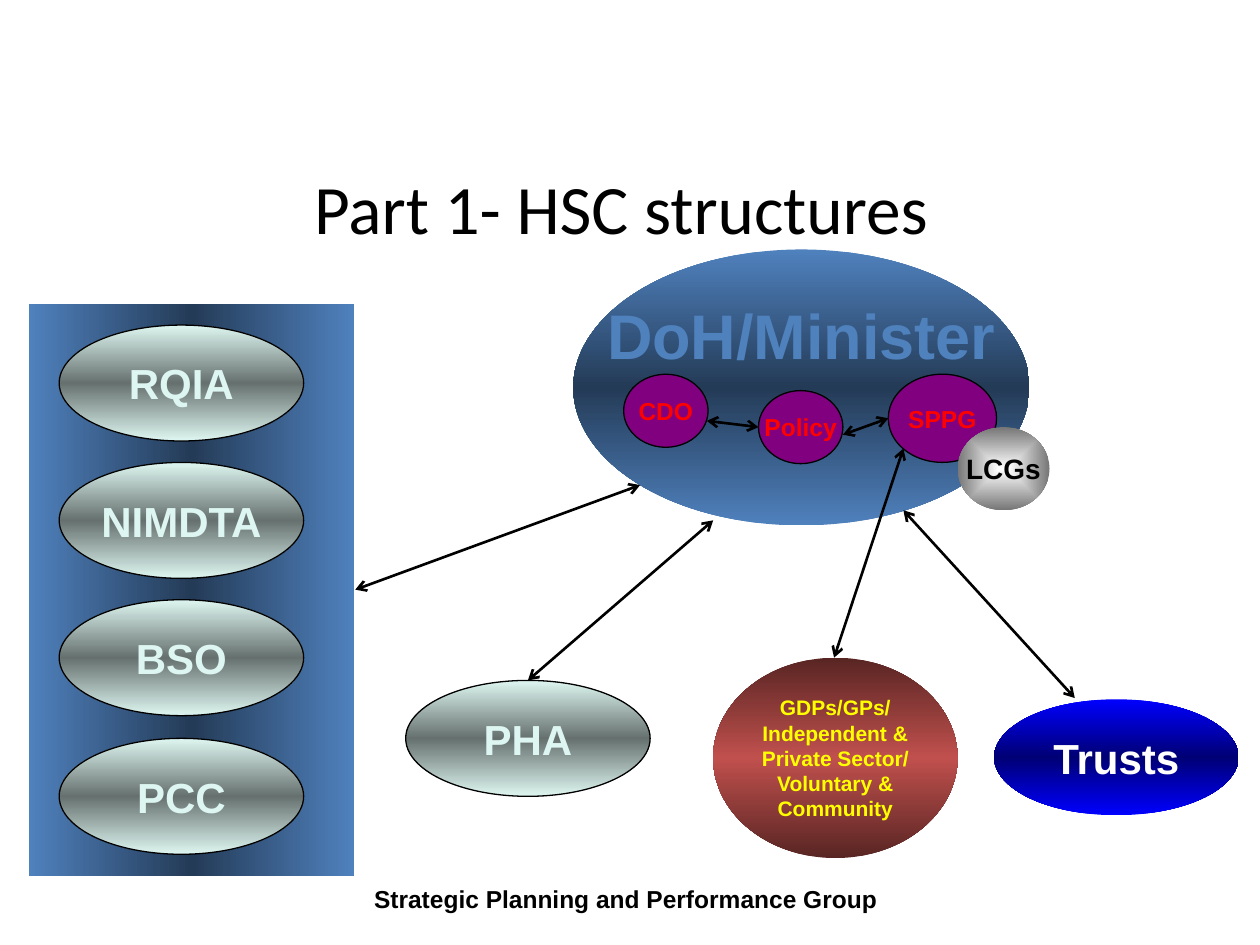
from dataclasses import dataclass
from typing import Optional

from pptx import Presentation
from pptx.dml.color import RGBColor
from pptx.enum.shapes import MSO_CONNECTOR, MSO_SHAPE
from pptx.enum.text import MSO_ANCHOR, PP_ALIGN
from pptx.oxml import parse_xml
from pptx.oxml.ns import nsdecls, qn
from pptx.util import Emu, Pt

PX = 9144

BLACK = RGBColor(0x00, 0x00, 0x00)
WHITE = RGBColor(0xFF, 0xFF, 0xFF)
RED = RGBColor(0xFF, 0x00, 0x00)
YELLOW = RGBColor(0xFF, 0xFF, 0x00)
PURPLE = RGBColor(0x80, 0x00, 0x80)
GRAY = RGBColor(0x76, 0x76, 0x76)
STEEL = RGBColor(0x4F, 0x81, 0xBD)
DARK_STEEL = RGBColor(0x24, 0x3B, 0x57)
MINT = RGBColor(0xDE, 0xF6, 0xF1)
DARK_MINT = RGBColor(0x66, 0x71, 0x6F)
BLUE = RGBColor(0x00, 0x00, 0xFF)
DARK_BLUE = RGBColor(0x00, 0x00, 0x75)
BRICK = RGBColor(0xC0, 0x50, 0x4D)
DARK_BRICK = RGBColor(0x58, 0x25, 0x23)


@dataclass(frozen=True)
class Style:
    colors: tuple[RGBColor, ...]
    text_color: RGBColor
    text_size: int
    outlined: bool = False
    angle: Optional[int] = 90


@dataclass(frozen=True)
class Body:
    text: str
    left: int
    top: int
    width: int
    height: int
    style: Style
    kind: MSO_SHAPE = MSO_SHAPE.OVAL
    anchor: MSO_ANCHOR = MSO_ANCHOR.MIDDLE
    wrap: bool = False


@dataclass(frozen=True)
class Arrow:
    start: tuple[int, int]
    end: tuple[int, int]


MINISTRY = Style((STEEL, DARK_STEEL, STEEL), STEEL, 36)
PANEL = Style((STEEL, DARK_STEEL, STEEL), STEEL, 20, angle=0)
AGENCY = Style((MINT, DARK_MINT, MINT), MINT, 24, outlined=True)
BRANCH = Style((PURPLE,), RED, 14, outlined=True)
TRUST = Style((BLUE, DARK_BLUE, BLUE), WHITE, 24)
PROVIDER = Style((DARK_BRICK, BRICK, DARK_BRICK), YELLOW, 12)
LOCAL_GROUP = Style((WHITE, GRAY), BLACK, 16, angle=None)

AGENCY_SIZE = (194, 92)
COLUMN_LEFT, COLUMN_TOP, COLUMN_BOTTOM = 47, 258, 586
COLUMN_NAMES = ("RQIA", "NIMDTA", "BSO", "PCC")

BODIES = [
    Body("DoH/Minister", 455, 198, 362, 219, MINISTRY, anchor=MSO_ANCHOR.TOP),
    Body("PHA", 322, 540, *AGENCY_SIZE, AGENCY),
    Body("CDO", 495, 297, 67, 58, BRANCH),
    Body("Trusts", 789, 555, *AGENCY_SIZE, TRUST),
    Body("GDPs/GPs/ Independent & Private Sector/ Voluntary & Community",
         566, 522, 194, 159, PROVIDER, wrap=True),
    Body("", 23, 241, 258, 454, PANEL, kind=MSO_SHAPE.RECTANGLE),
    Body("Policy", 602, 310, 67, 58, BRANCH),
    Body("SPPG", 705, 297, 86, 70, BRANCH),
    Body("LCGs", 760, 339, 73, 66, LOCAL_GROUP),
]

ARROWS = [
    Arrow((419, 540), (566, 413)),
    Arrow((282, 468), (508, 385)),
    Arrow((662, 522), (717, 356)),
    Arrow((853, 554), (717, 405)),
    Arrow((561, 334), (602, 339)),
    Arrow((669, 345), (705, 332)),
]


def px(*lengths: int) -> list[Emu]:
    return [Emu(length * PX) for length in lengths]


def paint(shape, style: Style) -> None:
    if len(style.colors) == 1:
        shape.fill.solid()
        shape.fill.fore_color.rgb = style.colors[0]
        return
    last = len(style.colors) - 1
    stops = "".join(
        f'<a:gs pos="{index * 100000 // last}"><a:srgbClr val="{color}"/></a:gs>'
        for index, color in enumerate(style.colors))
    if style.angle is None:
        direction = ('<a:path path="shape"><a:fillToRect l="50000" t="50000" '
                     'r="50000" b="50000"/></a:path>')
    else:
        direction = f'<a:lin ang="{style.angle * 60000}" scaled="1"/>'
    shape.fill.gradient()
    properties = shape._element.spPr
    gradient = parse_xml(f'<a:gradFill {nsdecls("a")} rotWithShape="1">'
                         f'<a:gsLst>{stops}</a:gsLst>{direction}</a:gradFill>')
    properties.replace(properties.find(qn("a:gradFill")), gradient)


def write(shape, text: str, size: float, color: RGBColor,
          font: str = "Arial", bold: bool = True) -> None:
    shape.text_frame.text = text
    para = shape.text_frame.paragraphs[0]
    para.alignment = PP_ALIGN.CENTER
    para.font.name = font
    para.font.size = Pt(size)
    para.font.bold = bold
    para.font.color.rgb = color


def draw_body(page, body: Body) -> None:
    shape = page.shapes.add_shape(
        body.kind, *px(body.left, body.top, body.width, body.height))
    shape.shadow.inherit = False
    paint(shape, body.style)
    if body.style.outlined:
        shape.line.color.rgb = BLACK
        shape.line.width = Pt(0.75)
    else:
        shape.line.fill.background()
    if body.text:
        frame = shape.text_frame
        frame.word_wrap = body.wrap
        frame.vertical_anchor = body.anchor
        frame.margin_left, frame.margin_right = px(8, 8)
        write(shape, body.text, body.style.text_size, body.style.text_color)


def draw_arrow(page, arrow: Arrow) -> None:
    connector = page.shapes.add_connector(
        MSO_CONNECTOR.STRAIGHT, *px(*arrow.start, *arrow.end))
    connector.line.color.rgb = BLACK
    connector.line.width = Pt(1.5)
    line = connector.line._get_or_add_ln()
    for end in ("headEnd", "tailEnd"):
        line.append(parse_xml(f'<a:{end} {nsdecls("a")} type="arrow"/>'))
    connector._element.spPr.append(parse_xml(f'<a:effectLst {nsdecls("a")}/>'))


def main() -> None:
    deck = Presentation()
    deck.slide_width, deck.slide_height = px(1000, 750)
    page = deck.slides.add_slide(deck.slide_layouts[5])

    title = page.shapes.title
    title.left, title.top, title.width, title.height = px(39, 125, 908, 78)
    title.text_frame.vertical_anchor = MSO_ANCHOR.MIDDLE
    write(title, "Part 1- HSC structures", 39.6, BLACK, "Calibri", bold=False)

    footer = page.shapes.add_textbox(*px(287, 697, 465, 40))
    footer.text_frame.word_wrap = False
    write(footer, "Strategic Planning and Performance Group", 14, BLACK)
    footer.text_frame.paragraphs[0].alignment = PP_ALIGN.LEFT

    for body in BODIES:
        draw_body(page, body)
    steps = len(COLUMN_NAMES) - 1
    for index, name in enumerate(COLUMN_NAMES):
        top = COLUMN_TOP + index * (COLUMN_BOTTOM - COLUMN_TOP) // steps
        draw_body(page, Body(name, COLUMN_LEFT, top, *AGENCY_SIZE, AGENCY))
    for arrow in ARROWS:
        draw_arrow(page, arrow)

    deck.save("out.pptx")


if __name__ == "__main__":
    main()
